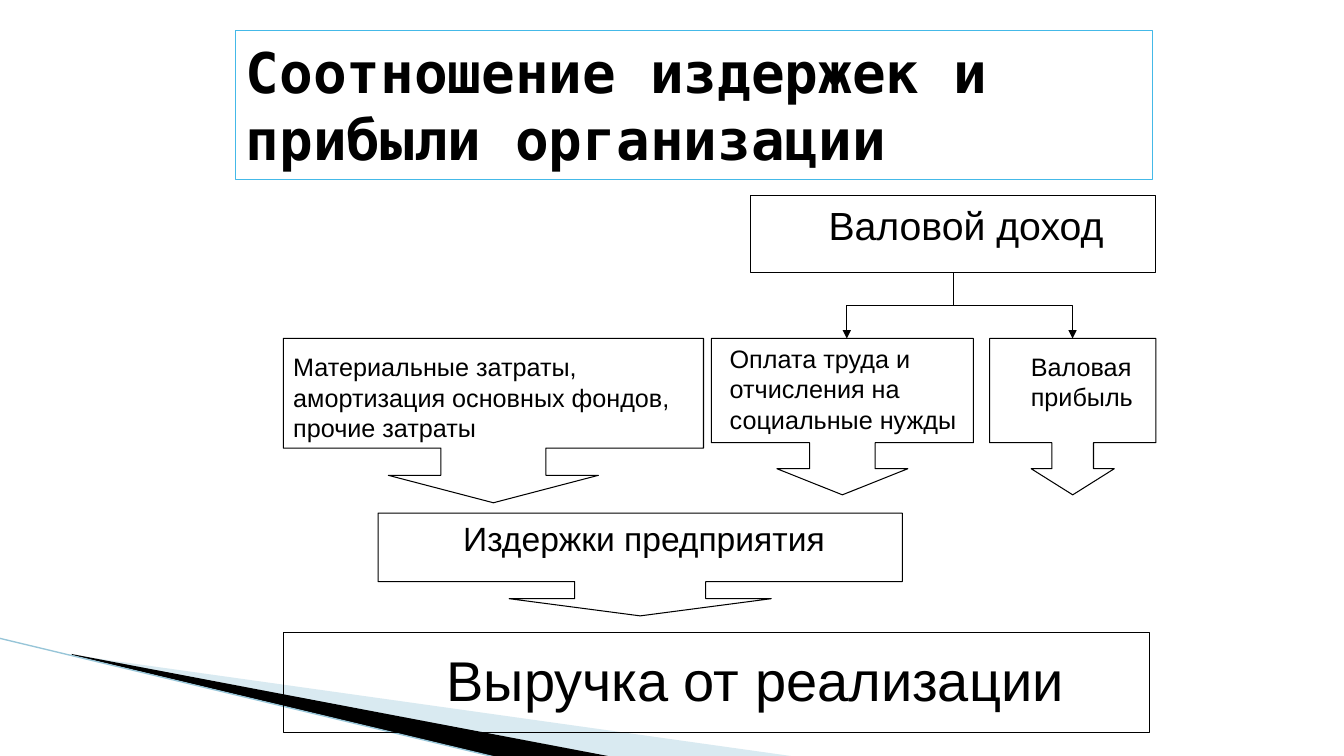
from lxml.etree import SubElement
from pptx import Presentation
from pptx.dml.color import RGBColor
from pptx.enum.shapes import MSO_CONNECTOR, MSO_SHAPE
from pptx.enum.text import MSO_ANCHOR, MSO_AUTO_SIZE, PP_ALIGN
from pptx.oxml.ns import qn
from pptx.util import Cm, Pt

BLACK = "000000"


def colour(value):
    return RGBColor.from_string(value)


def place(values):
    return [Cm(value) for value in values]


def style_line(shape, value=BLACK, width=0.75):
    shape.line.color.rgb = colour(value)
    shape.line.width = Pt(width)


def style_text(frame, size, font="Arial", align=PP_ALIGN.LEFT, bold=False):
    for para in frame.paragraphs:
        para.alignment = align
        for span in para.runs:
            span.font.name = font
            span.font.size = Pt(size)
            span.font.bold = bold
            span.font.color.rgb = colour(BLACK)


def add_title(page, text, area):
    title = page.shapes.title
    title.left, title.top, title.width, title.height = place(area)
    style_line(title, "44B9E8")
    frame = title.text_frame
    frame.text = text
    frame.word_wrap = True
    frame.auto_size = MSO_AUTO_SIZE.NONE
    frame.vertical_anchor = MSO_ANCHOR.MIDDLE
    style_text(frame, 40, "DejaVu Sans Mono", bold=True)


def add_frame(page, kind, area):
    box = page.shapes.add_shape(kind, *place(area))
    box.shadow.inherit = False
    box.fill.background()
    style_line(box)
    return box


def add_callout(page, area):
    box = add_frame(page, MSO_SHAPE.DOWN_ARROW_CALLOUT, area)
    ratio = area[2] / area[3] / 4
    for index, value in enumerate((ratio, ratio, 0.167, 0.667)):
        box.adjustments[index] = value


def add_label(page, text, area, size, align=PP_ALIGN.LEFT,
              anchor=MSO_ANCHOR.TOP, wrap=True):
    frame = page.shapes.add_textbox(*place(area)).text_frame
    frame.text = text
    frame.word_wrap = wrap
    frame.vertical_anchor = anchor
    style_text(frame, size, align=align)


def add_wedge(page, points, fill, opacity=100):
    start, *others = [place(point) for point in points]
    builder = page.shapes.build_freeform(*start, scale=1.0)
    builder.add_line_segments(others, close=True)
    wedge = builder.convert_to_shape()
    wedge.shadow.inherit = False
    wedge.fill.solid()
    wedge.fill.fore_color.rgb = colour(fill)
    wedge.line.fill.background()
    if opacity < 100:
        tint = wedge.fill._xPr.find(".//" + qn("a:srgbClr"))
        SubElement(tint, qn("a:alpha"), val=str(opacity * 1000))


def add_line(page, kind, ends, value=BLACK, width=0.75):
    line = page.shapes.add_connector(kind, *place(ends))
    style_line(line, value, width)
    SubElement(line._element.spPr, qn("a:effectLst"))
    return line


def add_branch(page, start, end):
    run, drop = end[0] - start[0], end[1] - start[1]
    middle_x, middle_y = (start[0] + end[0]) / 2, (start[1] + end[1]) / 2
    left, right = middle_x - drop / 2, middle_x + drop / 2
    top, bottom = middle_y - abs(run) / 2, middle_y + abs(run) / 2
    if run > 0:
        left, right = right, left
    branch = add_line(page, MSO_CONNECTOR.ELBOW, (left, top, right, bottom))
    turn = 270 if run > 0 else 90
    branch._element.spPr.find(qn("a:xfrm")).set("rot", str(turn * 60000))
    SubElement(branch.line._get_or_add_ln(), qn("a:tailEnd"), type="triangle")


def main():
    deck = Presentation()
    deck.slide_width, deck.slide_height = Cm(33.87), Cm(19.05)
    page = deck.slides.add_slide(deck.slide_layouts[5])

    add_wedge(page, [(1.85, 16.51), (20.14, 19.08), (15.44, 19.08)], "A0CBDC", 40)
    add_wedge(page, [(1.8, 16.48), (15.47, 19.08), (12.6, 19.1), (1.83, 16.51)], BLACK)
    add_line(page, MSO_CONNECTOR.STRAIGHT, (-0.03, 16.08, 12.57, 19.1), "97C5D8", 0.95)
    add_title(page, "Соотношение издержек и прибыли организации", (5.94, 0.76, 23.11, 3.76))

    for area in ((7.14, 8.53, 10.59, 4.14), (17.93, 8.53, 6.6, 3.94),
                 (24.94, 8.53, 4.19, 3.94), (9.53, 12.93, 13.21, 2.59)):
        add_callout(page, area)
    for area in ((7.14, 15.93, 21.82, 2.54), (18.92, 4.93, 10.21, 1.93)):
        add_frame(page, MSO_SHAPE.RECTANGLE, area)

    center, middle = PP_ALIGN.CENTER, MSO_ANCHOR.MIDDLE
    add_label(page, "Материальные затраты,\nамортизация основных фондов,\nпрочие затраты",
              (7.14, 8.74, 10.41, 2.54), 18)
    add_label(page, "Оплата труда и\nотчисления на социальные нужды",
              (18.14, 8.53, 6.4, 2.54), 18, anchor=middle)
    add_label(page, "Валовая\nприбыль", (25.73, 8.71, 3.28, 1.8), 18,
              anchor=middle, wrap=False)
    add_label(page, "Валовой доход", (20.14, 4.93, 8.41, 1.45), 28, center, middle)
    add_label(page, "Издержки предприятия", (9.93, 12.93, 12.6, 1.27), 24, center)
    add_label(page, "Выручка от реализации", (9.53, 16.13, 19, 1.96), 40, center)

    for target in (21.34, 27.03):
        add_branch(page, (24.03, 6.86), (target, 8.53))
    deck.save("out.pptx")


if __name__ == "__main__":
    main()
